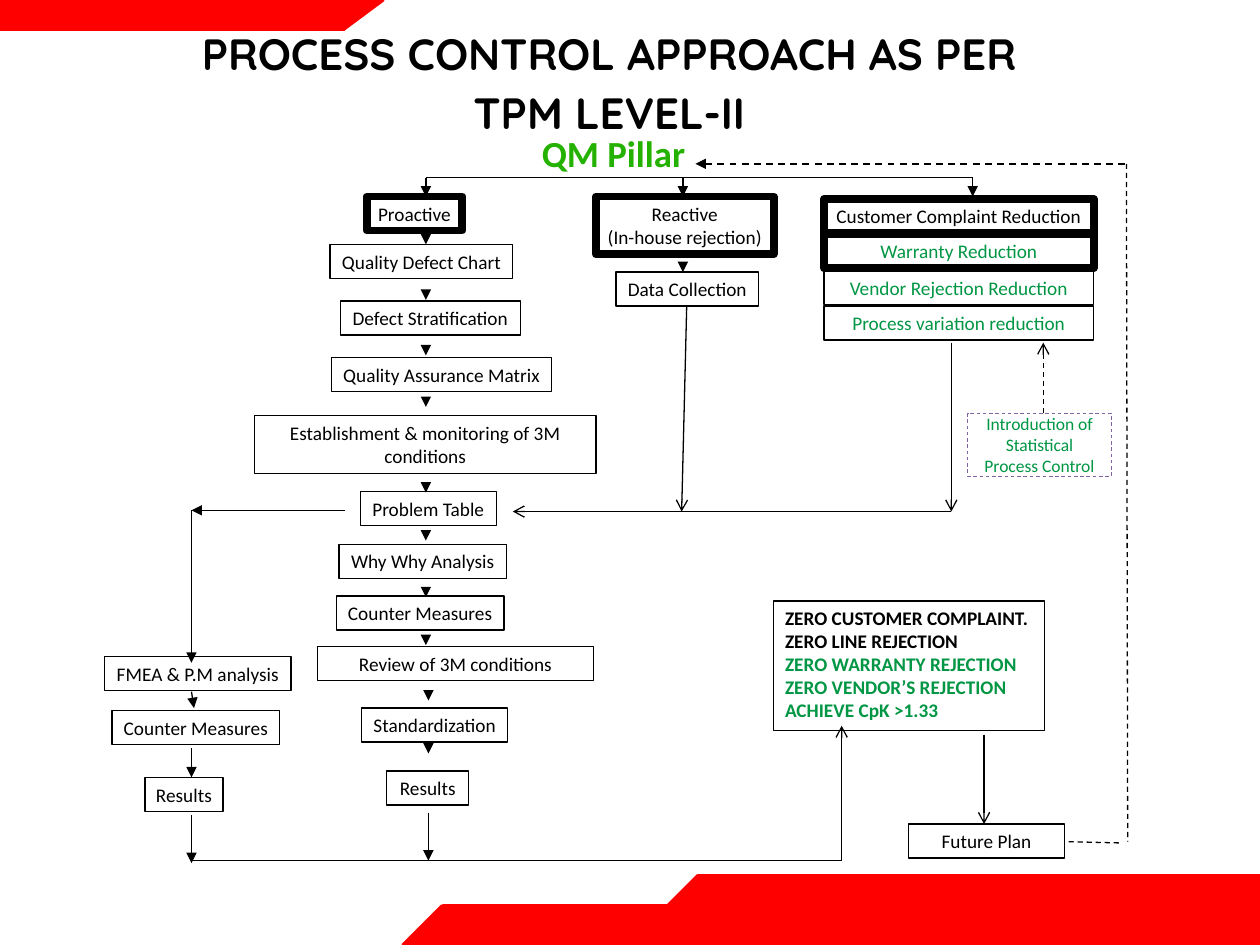
from collections import namedtuple

from lxml import etree
from pptx import Presentation
from pptx.dml.color import RGBColor
from pptx.enum.dml import MSO_LINE
from pptx.enum.shapes import MSO_CONNECTOR, MSO_SHAPE
from pptx.enum.text import MSO_ANCHOR, MSO_AUTO_SIZE, PP_ALIGN
from pptx.oxml.ns import qn
from pptx.util import Emu, Pt

PX = 9144
RED = RGBColor(0xFF, 0x00, 0x00)
BLACK = RGBColor(0x00, 0x00, 0x00)
WHITE = RGBColor(0xFF, 0xFF, 0xFF)
GREEN = RGBColor(0x00, 0x96, 0x44)
LIME = RGBColor(0x25, 0xB1, 0x00)
PURPLE = RGBColor(0x80, 0x64, 0xA2)
RECT, TRIANGLE = MSO_SHAPE.RECTANGLE, MSO_SHAPE.RIGHT_TRIANGLE
STRAIGHT = MSO_CONNECTOR.STRAIGHT
DASH = MSO_LINE.DASH
LEFT, CENTER = PP_ALIGN.LEFT, PP_ALIGN.CENTER
TOP, MIDDLE = MSO_ANCHOR.TOP, MSO_ANCHOR.MIDDLE
NO_AUTOFIT = MSO_AUTO_SIZE.NONE
THIN, THICK = 0.75, 4.5

Region = namedtuple("Region", "slide left top")


def px(*lengths):
    """Turn px lengths into EMU."""
    return [Emu(length * PX) for length in lengths]


def place(region, x, y, w, h):
    """Return the EMU frame of a part measured from its region's corner."""
    return px(region.left + x, region.top + y, w, h)


def write(frame, lines, size, color=BLACK, bold=False, font="Calibri",
          align=CENTER, anchor=MIDDLE, wrap=False):
    """Fill a text frame with one paragraph per line."""
    frame.auto_size = NO_AUTOFIT
    frame.word_wrap = wrap
    frame.vertical_anchor = anchor
    frame.margin_left, frame.margin_top, frame.margin_right, frame.margin_bottom = px(9, 4, 9, 4)
    frame.text = "\n".join(lines)
    for paragraph in frame.paragraphs:
        paragraph.alignment = align
        paragraph.font.name = font
        paragraph.font.size = Pt(size)
        paragraph.font.bold = bold
        paragraph.font.color.rgb = color


def add_box(region, x, y, w, h, *lines, color=BLACK, width=THIN, wrap=False, size=11):
    """Draw an outlined flowchart step and return it."""
    box = region.slide.shapes.add_shape(RECT, *place(region, x, y, w, h))
    box.shadow.inherit = False
    box.fill.background()
    box.line.color.rgb = BLACK
    box.line.width = Pt(width)
    write(box.text_frame, lines, size, color, wrap=wrap)
    return box


def add_line(region, x1, y1, x2, y2, head=None, tail=None, dash=False, width=THIN):
    """Draw a black line with optional arrowheads and dashes."""
    line = region.slide.shapes.add_connector(
        STRAIGHT, *place(region, x1, y1, region.left + x2, region.top + y2)
        [:2], *px(region.left + x2, region.top + y2))
    line.line.color.rgb = BLACK
    line.line.width = Pt(width)
    if dash:
        line.line.dash_style = DASH
    outline = line.line._get_or_add_ln()
    for end, kind in (("a:headEnd", head), ("a:tailEnd", tail)):
        if kind:
            etree.SubElement(outline, qn(end)).set("type", kind)
    etree.SubElement(line._element.spPr, qn("a:effectLst"))


def add_band(region, bar, corner, flip):
    """Draw a red bar with a slanted end."""
    for kind, frame in ((RECT, bar), (TRIANGLE, corner)):
        part = region.slide.shapes.add_shape(kind, *place(region, *frame))
        part.shadow.inherit = False
        part.fill.solid()
        part.fill.fore_color.rgb = RED
        part.line.color.rgb = RED
        part.line.width = Pt(2)
        if kind == TRIANGLE:
            part._element.spPr.xfrm.set(flip, "1")


def add_title(region):
    """Set the two-line heading."""
    title = region.slide.shapes.title
    title.left, title.top, title.width, title.height = place(region, 0, 0, 675, 101)
    write(title.text_frame, ["PROCESS CONTROL APPROACH AS PER", "TPM LEVEL-II"],
          25, bold=True, font="Quicksand", anchor=TOP)
    title.text_frame.paragraphs[1].space_before = Pt(4)


def add_pillar(region):
    """Draw the pillar name and the three branches below it."""
    pillar = region.slide.shapes.add_textbox(*place(region, 83, 0, 133, 44))
    write(pillar.text_frame, ["QM Pillar"], 21, LIME, bold=True, align=LEFT, anchor=TOP)
    add_line(region, 0, 41, 434, 41)
    for branch in (0, 204, 434):
        add_line(region, branch, 41, branch, 56, tail="triangle")


def add_proactive(region):
    """Draw the proactive chain from its head to its results."""
    add_box(region, 89, 0, 76, 27, "Proactive", width=THICK)
    for x, y, w, step in (
            (60, 38, 145, "Quality Defect Chart"),
            (68, 83, 143, "Defect Stratification"),
            (61, 128, 175, "Quality Assurance Matrix"),
            (84, 234, 108, "Problem Table"),
            (67, 276, 133, "Why Why Analysis"),
            (65, 317, 133, "Counter Measures"),
            (50, 357, 219, "Review of 3M conditions"),
            (85, 406, 116, "Standardization"),
            (105, 456, 65, "Results")):
        add_box(region, x, y, w, 27, step)
    add_box(region, 0, 174, 271, 46, "Establishment & monitoring of 3M conditions", wrap=True)
    for x, tops in ((136, (30, 74, 118, 159, 227, 265, 310, 348)), (138, (392, 434))):
        for top in tops:
            add_line(region, x, top, x, top + 8, tail="triangle")
    add_line(region, 138, 489, 138, 527, tail="triangle")


def add_reactive(region):
    """Draw the reactive chain down to the problem table line."""
    add_box(region, 0, 0, 141, 46, "Reactive", "(In-house rejection)", width=THICK)
    add_box(region, 16, 60, 113, 27, "Data Collection")
    add_line(region, 69, 53, 69, 60, tail="triangle")
    add_line(region, 72, 87, 68, 250, tail="arrow")


def add_reductions(region):
    """Draw the stacked reductions and the process control note."""
    for row, (text, color, width) in enumerate((
            ("Customer Complaint Reduction", BLACK, THICK),
            ("Warranty Reduction", GREEN, THICK),
            ("Vendor Rejection Reduction", GREEN, THIN),
            ("Process variation reduction", GREEN, THIN))):
        add_box(region, 0, row * 57 // 2, 214, 27, text, color=color, width=width)
    add_line(region, 101, 114, 101, 248, tail="arrow")
    add_line(region, 101, 248, -247, 248, tail="arrow")
    note = add_box(region, 114, 170, 114, 50, "Introduction of Statistical Process Control",
                   color=GREEN, width=0.5, wrap=True, size=10)
    note.fill.solid()
    note.fill.fore_color.rgb = WHITE
    note.line.color.rgb = PURPLE
    note.line.dash_style = DASH
    add_line(region, 174, 170, 174, 114, tail="arrow", dash=True)


def add_analysis(region):
    """Draw the analysis chain left of the problem table."""
    for x, y, w, step in ((0, 116, 148, "FMEA & P.M analysis"),
                          (6, 159, 133, "Counter Measures"),
                          (32, 212, 62, "Results")):
        add_box(region, x, y, w, 27, step)
    for arrow in ((191, 0, 69, 0), (69, 0, 69, 121), (69, 144, 71, 157),
                  (69, 189, 69, 212), (69, 242, 69, 280)):
        add_line(region, *arrow, tail="triangle")
    add_line(region, 69, 278, 585, 278)
    add_line(region, 585, 278, 585, 171, tail="arrow")


def add_goals(region):
    """Fill the goal list and draw the future plan with its feedback loop."""
    goals = region.slide.placeholders[1]
    goals.left, goals.top, goals.width, goals.height = place(region, 0, 0, 215, 103)
    goals.line.color.rgb = BLACK
    goals.line.width = Pt(THIN)
    frame = goals.text_frame
    frame.text = "\n".join(GOALS)
    for paragraph in frame.paragraphs:
        properties = paragraph._p.get_or_add_pPr()
        properties.set("marL", "0")
        properties.set("indent", "0")
        etree.SubElement(properties, qn("a:buNone"))
        paragraph.space_before = Pt(0)
    style_goals(frame)
    add_line(region, 167, 106, 167, 177, tail="arrow")
    add_box(region, 107, 177, 124, 27, "Future Plan")
    add_line(region, 274, 192, 234, 191, dash=True)
    add_line(region, 280, -347, 281, 191, dash=True)
    add_line(region, -62, -347, 280, -347, head="triangle", dash=True, width=1)


GOALS = ("ZERO CUSTOMER COMPLAINT.", "ZERO LINE REJECTION", "ZERO WARRANTY REJECTION",
         "ZERO VENDOR’S REJECTION", "ACHIEVE CpK >1.33")


def style_goals(frame):
    """Format the goals, with the later ones in green."""
    frame.auto_size = NO_AUTOFIT
    frame.word_wrap = True
    frame.vertical_anchor = TOP
    frame.margin_left, frame.margin_top, frame.margin_right, frame.margin_bottom = px(9, 4, 9, 4)
    for row, paragraph in enumerate(frame.paragraphs):
        paragraph.alignment = LEFT
        paragraph.font.name = "Calibri"
        paragraph.font.size = Pt(11)
        paragraph.font.bold = True
        paragraph.font.color.rgb = BLACK if row < 2 else GREEN


def main():
    """Build the slide and save it."""
    deck = Presentation()
    deck.slide_width, deck.slide_height = px(1000, 750)
    slide = deck.slides.add_slide(deck.slide_layouts[1])
    add_band(Region(slide, 320, 719), (32, 0, 648, 31), (0, 0, 31, 31), "flipH")
    add_band(Region(slide, 523, 695), (32, 0, 445, 23), (0, 0, 31, 31), "flipH")
    add_band(Region(slide, 0, 0), (0, 0, 273, 23), (273, 0, 31, 23), "flipV")
    add_title(Region(slide, 146, 17))
    add_pillar(Region(slide, 338, 100))
    add_proactive(Region(slide, 202, 156))
    add_reactive(Region(slide, 473, 156))
    add_reductions(Region(slide, 654, 158))
    add_analysis(Region(slide, 83, 405))
    add_goals(Region(slide, 614, 477))
    deck.save("out.pptx")


if __name__ == "__main__":
    main()
